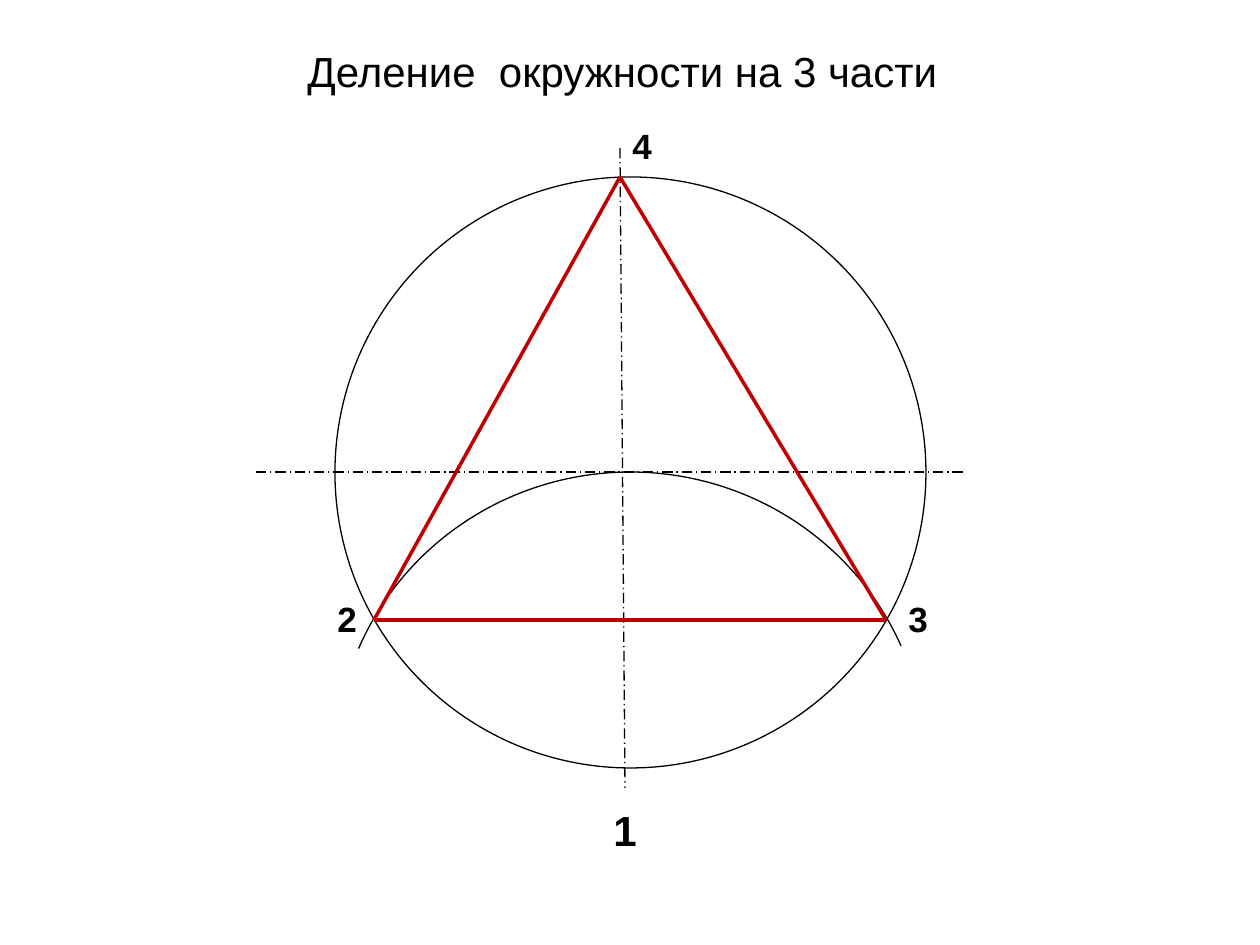
from dataclasses import dataclass

from lxml import etree
from pptx import Presentation
from pptx import util as u
from pptx.dml.color import RGBColor
from pptx.enum import dml, shapes
from pptx.oxml import ns

SCALE = 914400 / 126


@dataclass(frozen=True)
class Theme:
    font: str = "Arial"
    ink: str = "000000"
    accent: str = "C00000"
    large: int = 24
    small: int = 20
    thin: float = 0.75
    thick: float = 2


THEME = Theme()


def px(*lengths):
    return [u.Emu(round(n * SCALE)) for n in lengths]


def style_line(line, color, width):
    line.color.rgb = RGBColor.from_string(color)
    line.width = u.Pt(width)


def add_outline(slide, kind, box):
    sp = slide.shapes.add_shape(kind, *px(*box))
    sp.shadow.inherit = False
    sp.fill.background()
    style_line(sp.line, THEME.ink, THEME.thin)
    return sp


def add_line(slide, start, end, color, width):
    cxn = slide.shapes.add_connector(
        shapes.MSO_CONNECTOR.STRAIGHT, *px(*start, *end))
    style_line(cxn.line, color, width)
    etree.SubElement(cxn._element.spPr, ns.qn("a:effectLst"))
    return cxn


def add_axis(slide, start, end):
    cxn = add_line(slide, start, end, THEME.ink, THEME.thin)
    cxn.line.dash_style = dml.MSO_LINE.LONG_DASH_DOT


def add_text(slide, words, box, size, bold=False):
    tf = slide.shapes.add_textbox(*px(*box)).text_frame
    tf.word_wrap = True
    p = tf.paragraphs[0]
    p.text = words
    p.font.name = THEME.font
    p.font.size = u.Pt(size)
    p.font.bold = bold
    p.font.color.rgb = RGBColor.from_string(THEME.ink)


def main():
    prs = Presentation()
    prs.slide_width, prs.slide_height = px(1260, 945)
    slide = prs.slides.add_slide(prs.slide_layouts[6])

    add_outline(slide, shapes.MSO_SHAPE.OVAL, (335, 177, 591, 591))
    add_axis(slide, (620, 148), (625, 788))
    add_axis(slide, (256, 472), (965, 472))
    arc = add_outline(slide, shapes.MSO_SHAPE.ARC, (340, 467, 581, 591))
    arc.rotation = 270
    arc.adjustments[0] = 175.64
    arc.adjustments[1] = 40

    top, left, right = (620, 177), (374, 620), (886, 620)
    for start, end in ((top, left), (top, right), (left, right)):
        add_line(slide, start, end, THEME.accent, THEME.thick)

    add_text(slide, "Деление  окружности на 3 части",
             (295, 39, 679, 63), THEME.large)
    for digit, box, size in (
        ("1", (601, 798, 49, 63), THEME.large),
        ("2", (325, 591, 49, 55), THEME.small),
        ("3", (896, 591, 39, 55), THEME.small),
        ("4", (620, 118, 39, 55), THEME.small),
    ):
        add_text(slide, digit, box, size, bold=True)

    prs.save("out.pptx")


if __name__ == "__main__":
    main()
